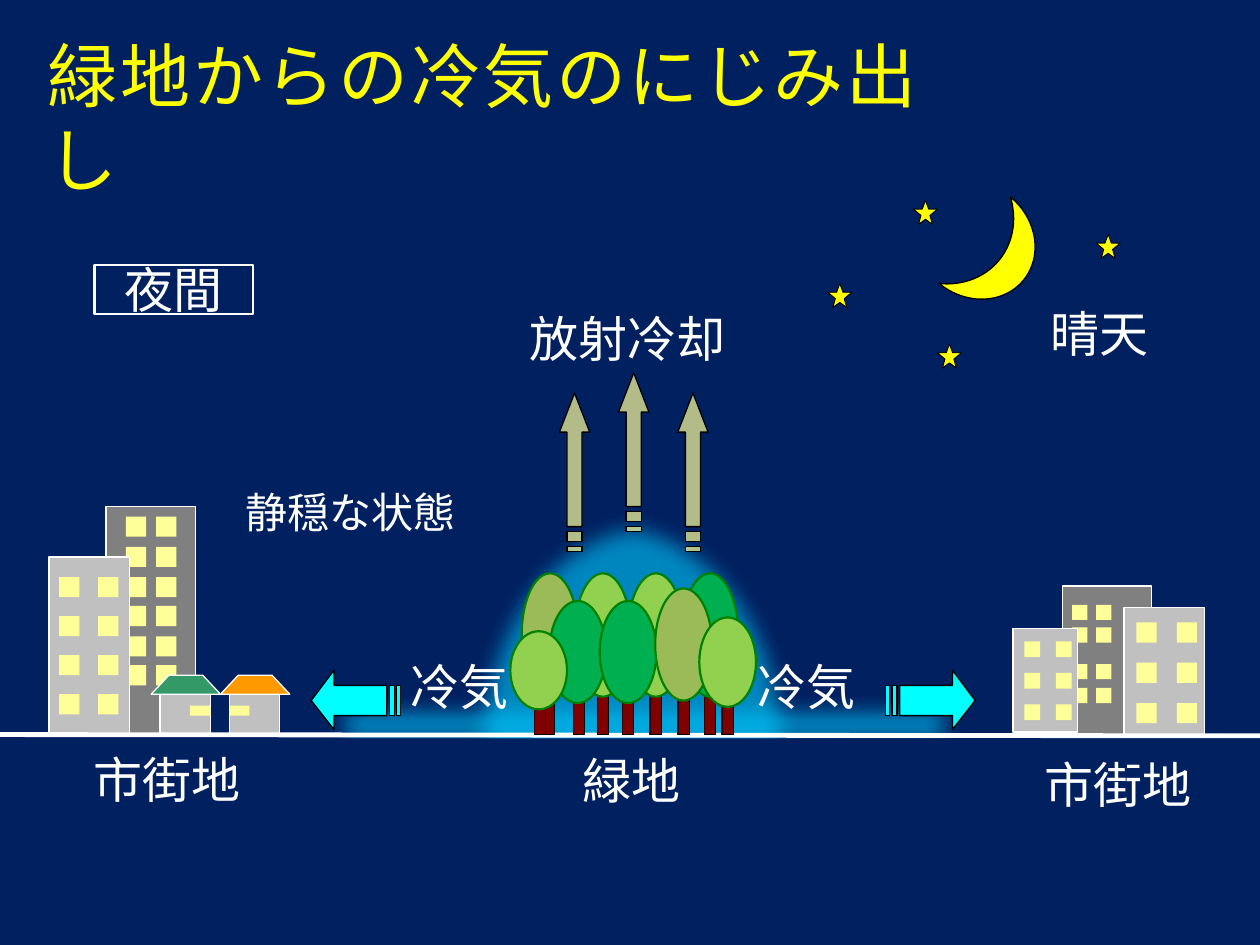
from lxml import etree
from pptx import Presentation
from pptx.dml.color import RGBColor
from pptx.enum.shapes import MSO_CONNECTOR, MSO_SHAPE
from pptx.enum.text import MSO_ANCHOR, MSO_AUTO_SIZE, PP_ALIGN
from pptx.oxml.ns import qn
from pptx.util import Inches, Pt

RECT, OVAL, ROUND = MSO_SHAPE.RECTANGLE, MSO_SHAPE.OVAL, MSO_SHAPE.ROUNDED_RECTANGLE
MOON = MSO_SHAPE.MOON
FONT = "Calibri"
COLORS = {
    "night": "002060", "cool": "00CCFF", "white": "FFFFFF", "black": "000000",
    "dark": "808080", "light": "C0C0C0", "window": "FFFF99", "yellow": "FFFF00",
    "orange": "FF9900", "teal": "339966", "trunk": "800000", "edge": "008000",
    "olive": "9BBB59", "lime": "92D050", "green": "00B050", "cyan": "00FFFF",
}
RGB = {name: RGBColor.from_string(code) for name, code in COLORS.items()}

deck = Presentation()
deck.slide_width, deck.slide_height = Inches(10), Inches(7.5)
slide = deck.slides.add_slide(deck.slide_layouts[5])
slide.background.fill.solid()
slide.background.fill.fore_color.rgb = RGB["night"]
shapes = slide.shapes


def paint(shape, fill, line=None, width=0.75, alpha=None):
    shape.shadow.inherit = False
    shape.fill.solid()
    shape.fill.fore_color.rgb = RGB[fill]
    if alpha:
        color = shape.fill._xPr.find(".//" + qn("a:srgbClr"))
        etree.SubElement(color, qn("a:alpha")).set("val", str(alpha * 1000))
    if line:
        shape.line.color.rgb = RGB[line]
        shape.line.width = Pt(width)
    else:
        shape.line.fill.background()
    return shape


def outline(paths):
    first, *rest = [[(Inches(x), Inches(y)) for x, y in path] for path in paths]
    pen = shapes.build_freeform(*first[0])
    pen.add_line_segments(first[1:])
    for path in rest:
        pen.move_to(*path[0])
        pen.add_line_segments(path[1:])
    return pen.convert_to_shape()


title = shapes.title
title.left, title.top, title.width, title.height = map(Inches, (0.28, 0.21, 7.1, 0.77))
frame = title.text_frame
frame.vertical_anchor = MSO_ANCHOR.TOP
frame.auto_size = MSO_AUTO_SIZE.SHAPE_TO_FIT_TEXT
para = frame.paragraphs[0]
para.alignment = PP_ALIGN.JUSTIFY
run = para.add_run()
run.text = "緑地からの冷気のにじみ出し"
run.font.name, run.font.size = FONT, Pt(40)
run.font.color.rgb = RGB["yellow"]

for kind, spot, alpha in [
    (ROUND, (2.55, 5.5, 5.12, 0.51), 75),
    (OVAL, (3.66, 4.02, 2.71, 3.58), 60),
]:
    haze = paint(shapes.add_shape(kind, *map(Inches, spot)), "cool", alpha=alpha)
    glow = haze._element.spPr.find(qn("a:effectLst"))
    etree.SubElement(glow, qn("a:softEdge")).set("rad", str(Pt(12.5)))
paint(shapes.add_shape(RECT, *map(Inches, (2.64, 5.86, 5.28, 1.83))), "night")

blocks = [
    ((0.84, 4.02, 0.71, 1.81), "dark", (1, 1.24), (4.1, 4.34, 4.58, 4.81, 5.05, 5.28), 0.16),
    ((0.39, 4.42, 0.64, 1.42), "light", (0.47, 0.78), (4.58, 4.89, 5.2, 5.51), 0.16),
    ((8.43, 4.65, 0.71, 1.19), "dark", (8.51, 8.7), (4.8, 4.98, 5.27, 5.46), 0.12),
    ((8.92, 4.82, 0.64, 1.03), "light", (9.02, 9.34), (4.94, 5.26, 5.58), 0.16),
    ((8.04, 4.99, 0.51, 0.82), "light", (8.13, 8.38), (5.09, 5.34, 5.59), 0.125),
]
for spot, fill, cols, rows, size in blocks:
    paint(shapes.add_shape(RECT, *map(Inches, spot)), fill, "white")
    for y in rows:
        for x in cols:
            paint(shapes.add_shape(RECT, *map(Inches, (x, y, size, size))), "window")

for x, pane, roof in [(1.75, 1.82, "orange"), (1.2, 1.51, "teal")]:
    paint(shapes.add_shape(RECT, *map(Inches, (x + 0.07, 5.44, 0.4, 0.4))), "light", "white")
    paint(shapes.add_shape(RECT, *map(Inches, (pane, 5.6, 0.16, 0.08))), "window")
    top = [(x, 5.51), (x + 0.14, 5.36), (x + 0.41, 5.36), (x + 0.55, 5.51)]
    paint(outline([top]), roof, "white")

moon = shapes.add_shape(MOON, *map(Inches, (7.68, 1.62, 0.5, 0.89)))
paint(moon, "yellow", "black").rotation = 39.4
moon._element.spPr.xfrm.set("flipH", "1")

star = [(0, 0.07), (0.07, 0.07), (0.095, 0), (0.12, 0.07), (0.19, 0.07),
        (0.13, 0.12), (0.15, 0.19), (0.095, 0.15), (0.04, 0.19), (0.06, 0.12)]
for x, y in [(6.57, 2.25), (7.44, 2.73), (8.7, 1.86), (7.25, 1.59)]:
    paint(outline([[(x + dx, y + dy) for dx, dy in star]]), "yellow", "black", 0.5)

ground = shapes.add_connector(MSO_CONNECTOR.STRAIGHT, *map(Inches, (0, 5.83, 10, 5.84)))
ground.line.color.rgb, ground.line.width = RGB["white"], Pt(2.75)
etree.SubElement(ground._element.spPr, qn("a:effectLst"))

trees = [
    (4.31, 5.37, 4.14, 4.55, 0.98, "olive"),
    (4.74, 5.37, 4.56, 4.55, 0.98, "lime"),
    (5.16, 5.37, 4.98, 4.55, 0.98, "lime"),
    (5.59, 5.37, 5.41, 4.55, 0.98, "green"),
    (4.55, 5.46, 4.36, 4.77, 0.81, "green"),
    (4.94, 5.46, 4.76, 4.77, 0.81, "green"),
    (5.38, 5.42, 5.2, 4.67, 0.89, "olive"),
    (4.24, 5.54, 4.05, 5.01, 0.62, "lime"),
    (5.73, 5.5, 5.55, 4.9, 0.71, "lime"),
]
for stem, base, x, y, tall, fill in trees:
    spot = (stem, base, 0.09, 5.83 - base)
    paint(shapes.add_shape(RECT, *map(Inches, spot)), "trunk", "black")
    spot = (x, y, 0.45, tall)
    paint(shapes.add_shape(OVAL, *map(Inches, spot)), fill, "edge", 1.25)

flow = [
    [(0.53, 0), (0.53, 0.12), (0.11, 0.12), (0.11, 0.36), (0.53, 0.36), (0.53, 0.47), (0.71, 0.24)],
    [(0.05, 0.12), (0.05, 0.36), (0.09, 0.36), (0.09, 0.12)],
    [(0, 0.12), (0, 0.36), (0.03, 0.36), (0.03, 0.12)],
]
for x, way in [(7.03, 1), (3.18, -1)]:
    paths = [[(x + way * dx, 5.32 + dy) for dx, dy in path] for path in flow]
    paint(outline(paths), "cyan", "black")

rise = [
    [(0, 0.31), (0.06, 0.31), (0.06, 1.06), (0.18, 1.06), (0.18, 0.31), (0.24, 0.31), (0.12, 0)],
    [(0.06, 1.18), (0.18, 1.18), (0.18, 1.1), (0.06, 1.1)],
    [(0.06, 1.26), (0.18, 1.26), (0.18, 1.22), (0.06, 1.22)],
]
for x, y in [(4.44, 3.12), (4.91, 2.96), (5.38, 3.12)]:
    paths = [[(x + dx, y + dy) for dx, dy in path] for path in rise]
    paint(outline(paths), "window", "black", alpha=70)

labels = [
    ("夜間", (0.75, 2.1, 1.26, 0.39), 28, True),
    ("晴天", (8.07, 2.41, 1.31, 0.46), 28, True),
    ("静穏な状態", (1.28, 3.83, 3.01, 0.46), 24, True),
    ("市街地", (0.44, 5.9, 1.77, 0.56), 28, True),
    ("市街地", (8.11, 5.9, 1.53, 0.64), 28, True),
    ("緑地", (4.44, 5.88, 1.15, 0.62), 28, True),
    ("放射冷却", (3.88, 2.41, 2.2, 0.55), 28, False),
    ("冷気", (3.1, 5.09, 1.1, 0.71), 28, False),
    ("冷気", (5.85, 5.09, 1.1, 0.71), 28, False),
]
for text, spot, size, wrap in labels:
    label = shapes.add_textbox(*map(Inches, spot))
    if text == "夜間":
        label.line.color.rgb, label.line.width = RGB["white"], Pt(1.25)
    frame = label.text_frame
    frame.word_wrap = wrap
    frame.vertical_anchor = MSO_ANCHOR.MIDDLE
    para = frame.paragraphs[0]
    para.alignment = PP_ALIGN.CENTER
    run = para.add_run()
    run.text = text
    run.font.name, run.font.size = FONT, Pt(size)
    run.font.color.rgb = RGB["white"]

deck.save("out.pptx")
